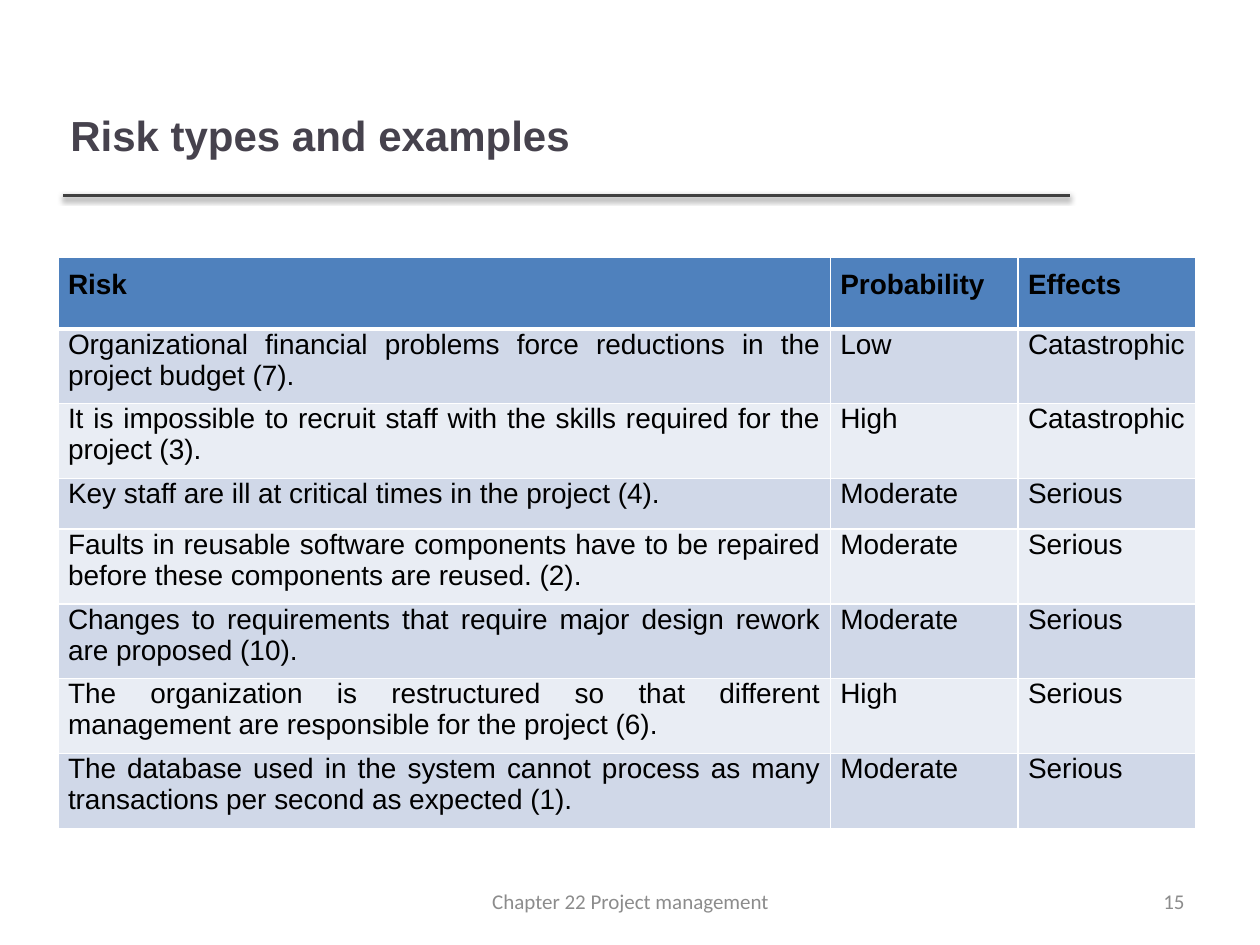
from dataclasses import dataclass

from lxml import etree
from pptx import Presentation
from pptx.dml.color import RGBColor
from pptx.enum import shapes, text
from pptx.oxml import ns
from pptx.util import Inches, Pt

COLORS = {
    "title": "46424D", "rule": "404040", "footer": "8C8C8C", "body": "000000",
    "header": "4F81BD", "odd": "D0D8E8", "even": "E9EDF4", "border": "FFFFFF",
}
COLUMN_WIDTHS = (6.13, 1.49, 1.41)
HEADINGS = ("Risk", "Probability", "Effects")
HEADER_HEIGHT = 0.57


@dataclass(frozen=True)
class Risk:
    description: str
    probability: str
    effects: str
    height: float = 0.59


@dataclass(frozen=True)
class Label:
    wording: str
    left: float
    top: float
    width: float
    height: float
    size: int
    font: str
    color: str
    align: text.PP_ALIGN
    bold: bool = False


RISKS = (
    Risk("Organizational financial problems force reductions in the project budget (7).",
         "Low", "Catastrophic"),
    Risk("It is impossible to recruit staff with the skills required for the project (3).",
         "High", "Catastrophic"),
    Risk("Key staff are ill at critical times in the project (4).",
         "Moderate", "Serious", 0.4),
    Risk("Faults in reusable software components have to be repaired before these "
         "components are reused. (2).", "Moderate", "Serious"),
    Risk("Changes to requirements that require major design rework are proposed (10).",
         "Moderate", "Serious"),
    Risk("The organization is restructured so that different management are responsible "
         "for the project (6).", "High", "Serious"),
    Risk("The database used in the system cannot process as many transactions per second "
         "as expected (1).", "Moderate", "Serious"),
)
LABELS = (
    Label("Risk types and examples", 0.46, 0.49, 7.63, 1.15, 24, "Arial", "title",
          text.PP_ALIGN.LEFT, True),
    Label("15", 7.17, 6.95, 2.33, 0.4, 12, "Calibri", "footer", text.PP_ALIGN.RIGHT),
    Label("Chapter 22 Project management", 3.42, 6.95, 3.17, 0.4, 12, "Calibri", "footer",
          text.PP_ALIGN.CENTER),
)


def rgb(name: str) -> RGBColor:
    return RGBColor.from_string(COLORS[name])


def style(paragraph, size: int, font: str, color: str, bold: bool, align) -> None:
    paragraph.alignment = align
    paragraph.font.size = Pt(size)
    paragraph.font.name = font
    paragraph.font.bold = bold
    paragraph.font.color.rgb = rgb(color)


def add_label(slide, label: Label) -> None:
    box = slide.shapes.add_textbox(Inches(label.left), Inches(label.top),
                                   Inches(label.width), Inches(label.height))
    frame = box.text_frame
    frame.word_wrap = True
    frame.vertical_anchor = text.MSO_ANCHOR.MIDDLE
    frame.text = label.wording
    style(frame.paragraphs[0], label.size, label.font, label.color, label.bold, label.align)


def add_rule(slide) -> None:
    rule = slide.shapes.add_connector(shapes.MSO_CONNECTOR.STRAIGHT, Inches(0.5),
                                      Inches(1.55), Inches(8.49), Inches(1.55))
    rule.line.color.rgb = rgb("rule")
    rule.line.width = Pt(2)
    effects = etree.SubElement(rule._element.spPr, ns.qn("a:effectLst"))
    shadow = etree.SubElement(effects, ns.qn("a:outerShdw"), blurRad=str(Pt(3.1)),
                              dist=str(Pt(1.6)), dir="5400000", rotWithShape="0")
    tint = etree.SubElement(shadow, ns.qn("a:srgbClr"), val="000000")
    etree.SubElement(tint, ns.qn("a:alpha"), val="38000")


def add_borders(cell, top: int, bottom: int) -> None:
    properties = cell._tc.get_or_add_tcPr()
    for side, width in (("L", 1), ("R", 1), ("T", top), ("B", bottom)):
        line = etree.SubElement(properties, ns.qn(f"a:ln{side}"), w=str(Pt(width)))
        fill = etree.SubElement(line, ns.qn("a:solidFill"))
        etree.SubElement(fill, ns.qn("a:srgbClr"), val=COLORS["border"])


def fill_cell(cell, wording: str, row: int) -> None:
    header = row == 0
    add_borders(cell, 3 if row == 1 else 1, 3 if header else 1)
    cell.fill.solid()
    cell.fill.fore_color.rgb = rgb("header" if header else "odd" if row % 2 else "even")
    cell.margin_left = cell.margin_right = Inches(0.08)
    cell.margin_top = Inches(0.1 if header else 0)
    cell.margin_bottom = Inches(0.1)
    cell.text = wording
    style(cell.text_frame.paragraphs[0], 16, "Arial", "body", header,
          text.PP_ALIGN.JUSTIFY)


def add_risk_table(slide) -> None:
    rows = [HEADINGS] + [(r.description, r.probability, r.effects) for r in RISKS]
    heights = [HEADER_HEIGHT] + [r.height for r in RISKS]
    table = slide.shapes.add_table(len(rows), len(HEADINGS), Inches(0.46), Inches(2.04),
                                   Inches(sum(COLUMN_WIDTHS)), Inches(sum(heights))).table
    for column, width in zip(table.columns, COLUMN_WIDTHS):
        column.width = Inches(width)
    for index, (wordings, height) in enumerate(zip(rows, heights)):
        table.rows[index].height = Inches(height)
        for column, wording in enumerate(wordings):
            fill_cell(table.cell(index, column), wording, index)


def main() -> None:
    """Build the risk types slide."""
    deck = Presentation()
    deck.slide_width, deck.slide_height = Inches(10), Inches(7.5)
    slide = deck.slides.add_slide(deck.slide_layouts[6])
    add_rule(slide)
    add_risk_table(slide)
    for label in LABELS:
        add_label(slide, label)
    deck.save("out.pptx")


if __name__ == "__main__":
    main()
